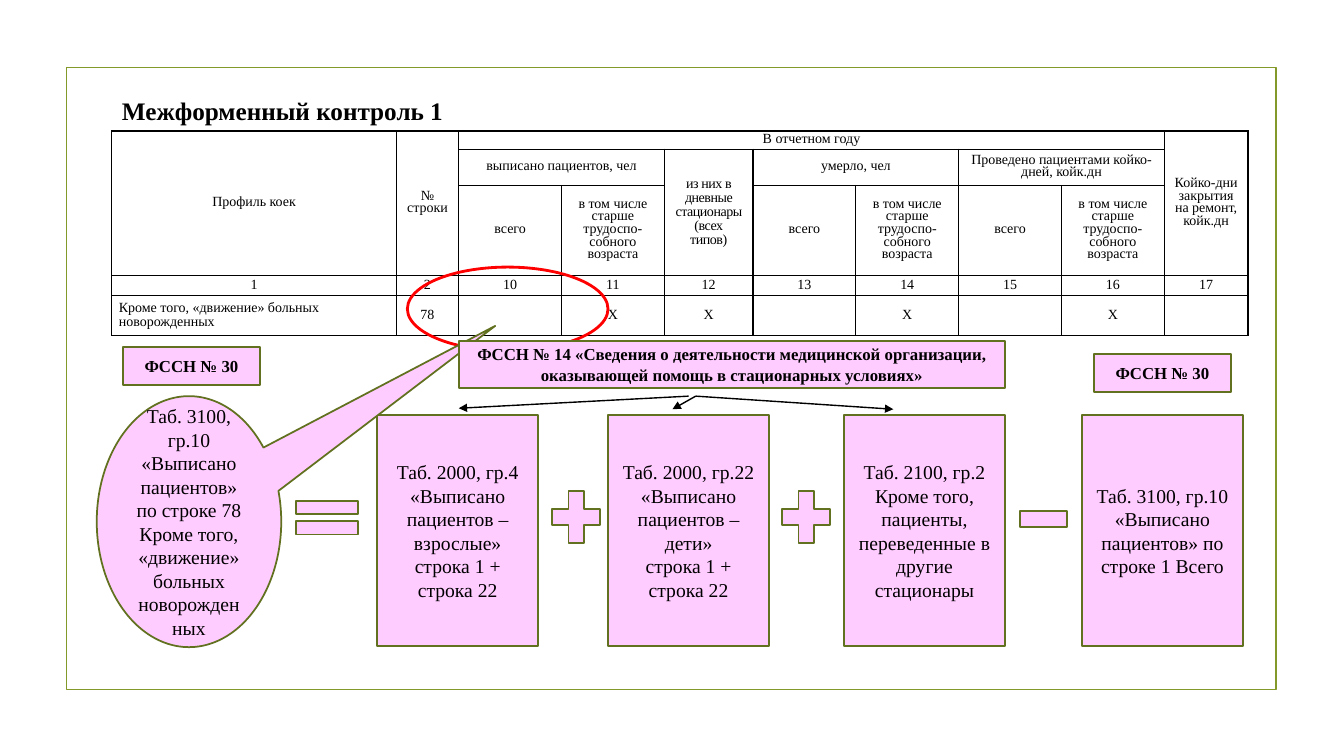
from lxml.etree import SubElement
from pptx import Presentation
from pptx.dml.color import RGBColor
from pptx.enum.shapes import MSO_CONNECTOR, MSO_SHAPE
from pptx.enum.text import MSO_ANCHOR, MSO_AUTO_SIZE, PP_ALIGN
from pptx.oxml import parse_xml
from pptx.oxml.ns import nsdecls, qn
from pptx.util import Inches, Pt

COLORS = {"frame": "83992A", "outline": "61711F", "box": "FFCCFF",
          "text": "000000", "mark": "FF0000"}
FONT = "Times New Roman"

COLUMN_WIDTHS = [2.82, 0.62, 1.02, 1.02, 0.88, 1.02, 1.02, 1.02, 1.02, 0.83]
ROW_HEIGHTS = [0.18, 0.36, 0.89, 0.2, 0.4]
OLDER = "в том числе старше\nтрудоспо-\nсобного\nвозраста"
ROWS = [
    ["Профиль коек", "№\vстроки", "В отчетном году", "", "", "", "", "", "",
     "Койко-дни закрытия на ремонт, койк.дн"],
    ["", "", "выписано пациентов, чел", "",
     "из них в дневные стационары (всех\vтипов)", "умерло, чел", "",
     "Проведено пациентами койко-дней, койк.дн", "", ""],
    ["", "", "всего", OLDER, "", "всего", OLDER, "всего", OLDER, ""],
    ["1", "2", "10", "11", "12", "13", "14", "15", "16", "17"],
    ["Кроме того, «движение» больных новорожденных", "78", "", "X", "X", "",
     "X", "", "X", ""],
]
MERGES = [(0, 0, 2, 0), (0, 1, 2, 1), (0, 2, 0, 8), (0, 9, 2, 9), (1, 2, 1, 3),
          (1, 4, 2, 4), (1, 5, 1, 6), (1, 7, 1, 8)]

TERM_TOP, TERM_WIDTH, TERM_HEIGHT = 4.12, 1.6, 2.29
FIRST_TERM = (3.74, "Таб. 2000, гр.4 «Выписано пациентов – взрослые» строка 1 + строка 22")
OTHER_TERMS = [
    (6.03, "Таб. 2000, гр.22 «Выписано пациентов – дети»\vстрока 1 + строка 22"),
    (8.37, "Таб. 2100, гр.2 Кроме того, пациенты, переведенные в другие стационары"),
    (10.73, "Таб. 3100, гр.10 «Выписано пациентов» по строке 1 Всего"),
]
TARGET = ("Таб. 3100, гр.10 «Выписано пациентов» по строке 78 Кроме того, "
          "«движение» больных новорожденных")
SIGNS = [(MSO_SHAPE.MATH_PLUS, 5.39, 4.78, 0.65, 0.7),
         (MSO_SHAPE.MATH_PLUS, 7.67, 4.78, 0.65, 0.7),
         (MSO_SHAPE.MATH_MINUS, 10.03, 4.82, 0.64, 0.66)]
LABELS = [
    (1.22, 3.44, 1.36, 0.38, "ФССН № 30"),
    (10.85, 3.51, 1.36, 0.38, "ФССН № 30"),
    (4.55, 3.38, 5.42, 0.47, "ФССН № 14 «Сведения о деятельности медицинской "
     "организации, оказывающей помощь в стационарных условиях»"),
]
ARROWS = [(6.83, 3.93, 4.55, 4.05), (6.9, 3.93, 6.67, 4.06), (6.9, 3.93, 8.86, 4.06)]


class SlideBuilder:
    def __init__(self, slide):
        self.slide = slide

    def color(self, name):
        return RGBColor.from_string(COLORS[name])

    def fill_text(self, frame, text, size, bold=False, align=PP_ALIGN.CENTER):
        frame.text = text
        for para in frame.paragraphs:
            para.alignment = align
            for span in para.runs:
                span.font.name = FONT
                span.font.size = Pt(size)
                span.font.bold = bold
                span.font.color.rgb = self.color("text")

    def title(self, text, left, top, width, height):
        box = self.slide.shapes.title
        box.left, box.top = Inches(left), Inches(top)
        box.width, box.height = Inches(width), Inches(height)
        frame = box.text_frame
        frame.auto_size = MSO_AUTO_SIZE.NONE
        frame.vertical_anchor = MSO_ANCHOR.MIDDLE
        self.fill_text(frame, text, 18, True, PP_ALIGN.LEFT)

    def shape(self, kind, left, top, width, height, text="", size=14, bold=False,
              fill="box", line="outline", weight=1.25):
        box = self.slide.shapes.add_shape(
            kind, Inches(left), Inches(top), Inches(width), Inches(height))
        box.shadow.inherit = False
        if fill:
            box.fill.solid()
            box.fill.fore_color.rgb = self.color(fill)
        else:
            box.fill.background()
        box.line.color.rgb = self.color(line)
        box.line.width = Pt(weight)
        if text:
            box.text_frame.word_wrap = True
            box.text_frame.vertical_anchor = MSO_ANCHOR.MIDDLE
            self.fill_text(box.text_frame, text, size, bold)
        return box

    def arrow(self, x1, y1, x2, y2):
        line = self.slide.shapes.add_connector(
            MSO_CONNECTOR.STRAIGHT, Inches(x1), Inches(y1), Inches(x2), Inches(y2))
        line.line.color.rgb = self.color("text")
        line.line.width = Pt(1)
        properties = line._element.spPr
        SubElement(properties.find(qn("a:ln")), qn("a:tailEnd"), type="triangle")
        SubElement(properties, qn("a:effectLst"))

    def borders(self, cell):
        properties = cell._tc.get_or_add_tcPr()
        for index, side in enumerate("LRTB"):
            properties.insert(index, parse_xml(
                f'<a:ln{side} {nsdecls("a")} w="12700"><a:solidFill>'
                f'<a:srgbClr val="{COLORS["text"]}"/></a:solidFill></a:ln{side}>'))

    def table(self, left, top):
        table = self.slide.shapes.add_table(
            len(ROWS), len(COLUMN_WIDTHS), Inches(left), Inches(top),
            Inches(sum(COLUMN_WIDTHS)), Inches(sum(ROW_HEIGHTS))).table
        table.first_row = table.horz_banding = False
        for column, width in zip(table.columns, COLUMN_WIDTHS):
            column.width = Inches(width)
        for row, height in zip(table.rows, ROW_HEIGHTS):
            row.height = Inches(height)
        for r, texts in enumerate(ROWS):
            for c, text in enumerate(texts):
                cell = table.cell(r, c)
                cell.margin_left = cell.margin_right = Inches(0.07)
                cell.margin_top = cell.margin_bottom = 0
                cell.vertical_anchor = MSO_ANCHOR.MIDDLE
                cell.fill.background()
                self.borders(cell)
                align = PP_ALIGN.LEFT if (r, c) == (4, 0) else PP_ALIGN.CENTER
                self.fill_text(cell.text_frame, text, 10, align=align)
                tight = (r, c) == (1, 4)
                for para in cell.text_frame.paragraphs:
                    para.line_spacing = Pt(10 if r > 2 or tight else 9)
                    for span in para.runs if tight else ():
                        span._r.get_or_add_rPr().set("spc", "-30")
        for r1, c1, r2, c2 in MERGES:
            table.cell(r1, c1).merge(table.cell(r2, c2))

    def term(self, left, text):
        self.shape(MSO_SHAPE.RECTANGLE, left, TERM_TOP, TERM_WIDTH, TERM_HEIGHT, text)


def main():
    deck = Presentation()
    deck.slide_width, deck.slide_height = Inches(13.33), Inches(7.5)
    page = SlideBuilder(deck.slides.add_slide(deck.slide_layouts[5]))
    page.shape(MSO_SHAPE.RECTANGLE, 0.66, 0.67, 12, 6.17, fill=None, line="frame")
    page.title("Межформенный контроль 1", 1.11, 0.9, 11.26, 0.4)
    page.table(1.11, 1.3)
    page.shape(MSO_SHAPE.OVAL, 4.04, 2.65, 1.99, 0.83, fill=None, line="mark", weight=2)
    page.term(*FIRST_TERM)
    callout = page.shape(MSO_SHAPE.OVAL_CALLOUT, 0.96, 3.93, 1.83, 2.49, TARGET)
    callout.adjustments[0], callout.adjustments[1] = 1.66, -0.78
    page.shape(MSO_SHAPE.MATH_EQUAL, 2.83, 4.85, 0.83, 0.57)
    for left, text in OTHER_TERMS:
        page.term(left, text)
    for sign in SIGNS:
        page.shape(*sign)
    for label in LABELS:
        page.shape(MSO_SHAPE.RECTANGLE, *label, size=12, bold=True)
    for ends in ARROWS:
        page.arrow(*ends)
    deck.save("out.pptx")


if __name__ == "__main__":
    main()
